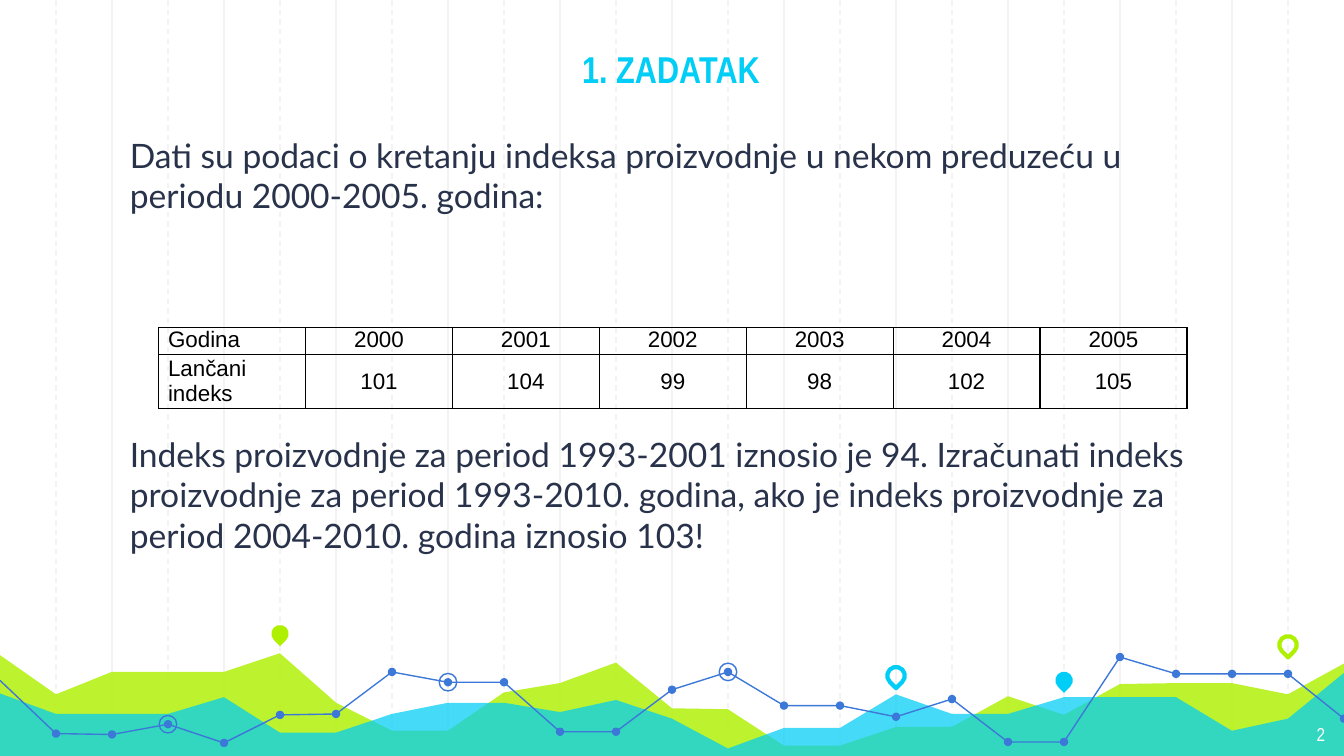
from dataclasses import dataclass

from lxml import etree
from pptx import Presentation
from pptx.dml.color import RGBColor
from pptx.enum.dml import MSO_LINE
from pptx.enum.shapes import MSO_CONNECTOR, MSO_SHAPE
from pptx.enum.text import MSO_ANCHOR, MSO_AUTO_SIZE, PP_ALIGN
from pptx.oxml.ns import qn
from pptx.util import Pt

STRAIGHT = MSO_CONNECTOR.STRAIGHT
ELLIPSE, TEARDROP = MSO_SHAPE.OVAL, MSO_SHAPE.TEAR
DASH = MSO_LINE.DASH
LEFT, CENTER, RIGHT = PP_ALIGN.LEFT, PP_ALIGN.CENTER, PP_ALIGN.RIGHT
TOP, MIDDLE, BOTTOM = MSO_ANCHOR.TOP, MSO_ANCHOR.MIDDLE, MSO_ANCHOR.BOTTOM


@dataclass(frozen=True)
class Theme:
    grid: str = "F3F3F3"
    lime: str = "AFF000"
    cyan: str = "00CEF6"
    blue: str = "3C78D8"
    ink: str = "28324A"
    black: str = "000000"
    white: str = "FFFFFF"
    heading_font: str = "Arial Narrow"
    body_font: str = "Lato"
    table_font: str = "Arial"
    title_size: int = 20
    body_size: int = 18
    table_size: int = 12
    number_size: int = 10
    thin: float = 0.75
    thick: float = 2.25


class SlideBuilder:
    def __init__(self, slide, theme):
        self.slide, self.shapes, self.theme = slide, slide.shapes, theme

    def paint(self, s, fill=None, line=None, width=0.75, alpha=None):
        s.shadow.inherit = False
        if fill:
            s.fill.solid()
            s.fill.fore_color.rgb = RGBColor.from_string(fill)
            if alpha:
                color = s.fill._xPr.find(qn("a:solidFill"))[0]
                etree.SubElement(color, qn("a:alpha"), val=str(alpha * 1000))
        else:
            s.fill.background()
        if line:
            s.line.color.rgb = RGBColor.from_string(line)
            s.line.width = Pt(width)
        else:
            s.line.fill.background()

    def grid_line(self, x, height, dashed):
        s = self.shapes.add_connector(STRAIGHT, Pt(x), 0, Pt(x), Pt(height))
        s.line.color.rgb = RGBColor.from_string(self.theme.grid)
        s.line.width = Pt(self.theme.thin)
        if dashed:
            s.line.dash_style = DASH
        etree.SubElement(s._element.spPr, qn("a:effectLst"))

    def outline(self, points, close, **style):
        points = [(Pt(x), Pt(y)) for x, y in points]
        builder = self.shapes.build_freeform(*points[0], scale=1.0)
        builder.add_line_segments(points[1:], close=close)
        self.paint(builder.convert_to_shape(), **style)

    def marker(self, kind, x, y, size, rotation=0, **style):
        s = self.shapes.add_shape(kind, Pt(x - size / 2), Pt(y - size / 2), Pt(size), Pt(size))
        s.rotation = rotation
        self.paint(s, **style)

    def style(self, p, size, font, color, align=LEFT, bold=False):
        p.alignment = align
        for r in p.runs:
            r.font.size, r.font.name, r.font.bold = Pt(size), font, bold
            r.font.color.rgb = RGBColor.from_string(color)

    def frame(self, s, box, anchor=TOP):
        s.left, s.top, s.width, s.height = (Pt(v) for v in box)
        tf = s.text_frame
        tf.word_wrap, tf.auto_size, tf.vertical_anchor = True, MSO_AUTO_SIZE.NONE, anchor
        tf.margin_left = tf.margin_right = tf.margin_top = tf.margin_bottom = Pt(7.2)
        return tf

    def title(self, text, box):
        t, s = self.theme, self.shapes.title
        # Bring the title in front of the backdrop
        self.shapes._spTree.append(s._element)
        tf = self.frame(s, box, BOTTOM)
        tf.text = text
        self.style(tf.paragraphs[0], t.title_size, t.heading_font, t.cyan, CENTER, True)

    def text(self, paragraphs, box, size, font, color, align=LEFT, gap=0, indent=0):
        tf = self.frame(self.shapes.add_textbox(0, 0, 0, 0), box)
        tf.text = "\n".join(paragraphs)
        for i, p in enumerate(tf.paragraphs):
            p._p.get_or_add_pPr().set("marL", str(Pt(indent)))
            if i:
                p.space_before = Pt(gap)
            self.style(p, size, font, color, align)

    def border(self, cell):
        tcPr = cell._tc.get_or_add_tcPr()
        for side in ("lnL", "lnR", "lnT", "lnB"):
            ln = etree.SubElement(tcPr, qn(f"a:{side}"), w=str(Pt(self.theme.thin)))
            fill = etree.SubElement(ln, qn("a:solidFill"))
            etree.SubElement(fill, qn("a:srgbClr"), val=self.theme.black)

    def table(self, rows, left, top, col_width, heights):
        t, n = self.theme, len(rows[0])
        table = self.shapes.add_table(len(rows), n, Pt(left), Pt(top),
                                      Pt(col_width * n), Pt(sum(heights))).table
        table.first_row = table.horz_banding = False
        for col in table.columns:
            col.width = Pt(col_width)
        for i, values in enumerate(rows):
            table.rows[i].height = Pt(heights[i])
            for j, value in enumerate(values):
                cell = table.cell(i, j)
                cell.text = value
                cell.margin_left = cell.margin_right = Pt(5)
                cell.margin_top = cell.margin_bottom = 0
                cell.vertical_anchor = MIDDLE if i else TOP
                self.border(cell)
                cell.fill.background()
                self.style(cell.text_frame.paragraphs[0], t.table_size, t.table_font,
                           t.black, CENTER if j else LEFT)


STEP = 30  # distance between grid lines
FLOOR = 406.8  # lower edge of the backdrop
# Heights of the areas and the line, one value per grid line from the left edge
LIME_AREA = [351, 372, 360, 360, 360, 350, 376.5, 391.5, 391.5, 371, 366, 355, 379.5,
             380, 399.5, 399.5, 389.5, 389.5, 373, 383, 366.5, 366, 366, 372, 355.5]
CYAN_AREA = [371.5, 382.5, 382.5, 382.5, 373.5, 392.5, 392.5, 382.5, 376.5, 376.5, 381.5,
             375, 385, 401, 390, 390, 372, 382.5, 382.5, 373.5, 373.5, 373.5, 391.5, 385, 360.5]
TREND = [364.5, 393, 393.5, 388, 398, 383, 382.5, 360, 365.5, 365.5, 392, 392, 369.5,
         360, 378, 378, 384, 374.5, 397.5, 397.5, 352, 361, 361, 361, 385]
RINGS = (3, 8, 13)


def main():
    prs = Presentation()
    prs.slide_width, prs.slide_height = Pt(720), Pt(405)
    t = Theme()
    b = SlideBuilder(prs.slides.add_slide(prs.slide_layouts[5]), t)

    # Grid: solid and dashed lines alternate
    for i in range(1, 24):
        b.grid_line(i * STEP, FLOOR, dashed=i % 2 == 1)

    # Areas
    for heights, color, alpha in ((LIME_AREA, t.lime, 82), (CYAN_AREA, t.cyan, 73)):
        points = [(i * STEP, y) for i, y in enumerate(heights)]
        b.outline(points + [(720, FLOOR), (0, FLOOR)], True, fill=color, alpha=alpha)

    # Trend line with dots and rings
    trend = [(i * STEP, y) for i, y in enumerate(TREND)]
    b.outline(trend, False, line=t.blue, width=t.thin)
    for x, y in trend[1:]:
        b.marker(ELLIPSE, x, y, 4.5, fill=t.blue)
    for i in RINGS:
        b.marker(ELLIPSE, *trend[i], 9.4, line=t.blue, width=t.thin)

    # Map pins
    for i, y, style in ((5, 339.5, {"fill": t.lime}), (16, 362, {"line": t.cyan}),
                        (19, 364.5, {"fill": t.cyan}), (23, 345.5, {"line": t.lime})):
        b.marker(TEARDROP, i * STEP, y, 9.4, rotation=135, width=t.thick, **style)

    # Task text and slide number
    b.text(["2"], (674, 380, 43, 25), t.number_size, t.heading_font, t.white, RIGHT)
    b.text(["Dati su podaci o kretanju indeksa proizvodnje u nekom preduzeću u "
            "periodu 2000-2005. godina:",
            "Indeks proizvodnje za period 1993-2001 iznosio je 94. Izračunati indeks "
            "proizvodnje za period 1993-2010. godina, ako je indeks proizvodnje za "
            "period 2004-2010. godina iznosio 103!"],
           (53.5, 65, 612, 240), t.body_size, t.body_font, t.ink, gap=117, indent=9)
    b.title("1. ZADATAK", (84, 0, 551, 56))

    # Chain indices by year
    b.table([["Godina", "2000", "2001", "2002", "2003", "2004", "2005"],
             ["Lančani indeks", "101", "104", "99", "98", "102", "105"]],
            85, 175.5, 78.7, (14.4, 28.8))

    prs.save("out.pptx")


if __name__ == "__main__":
    main()
